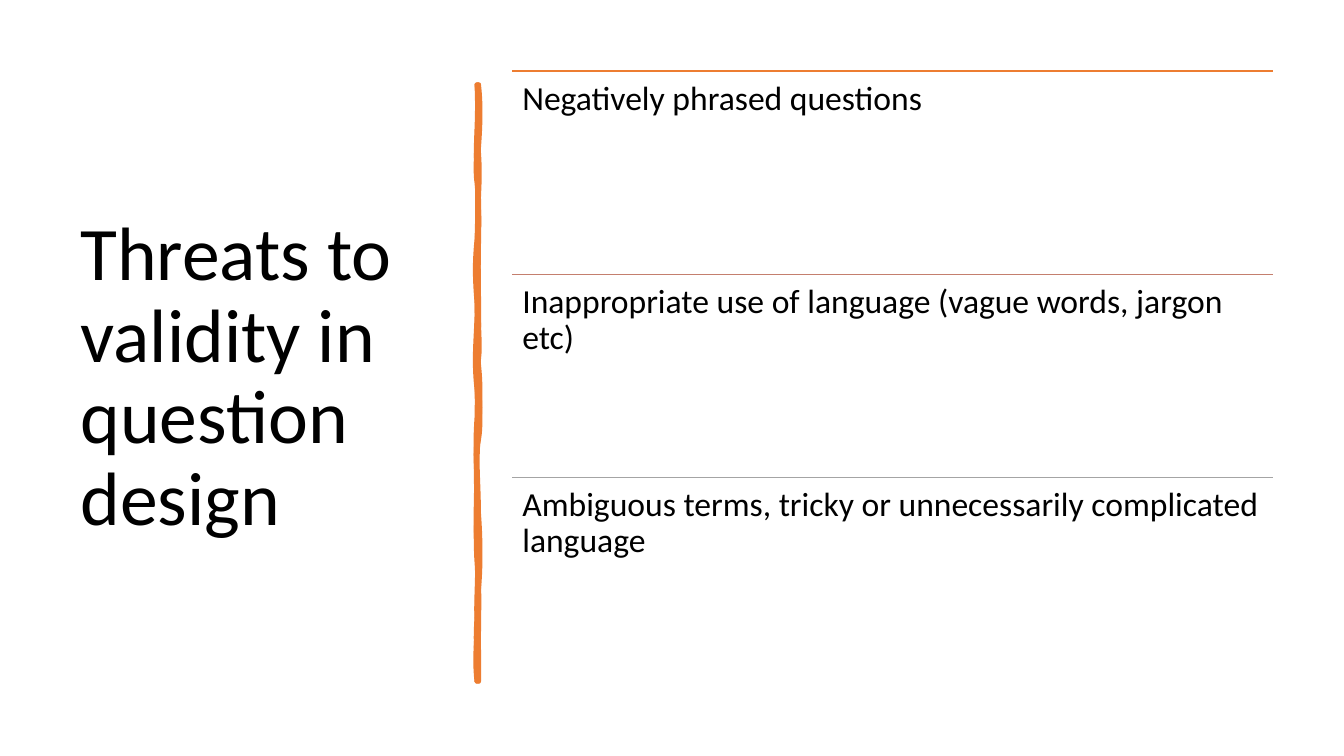
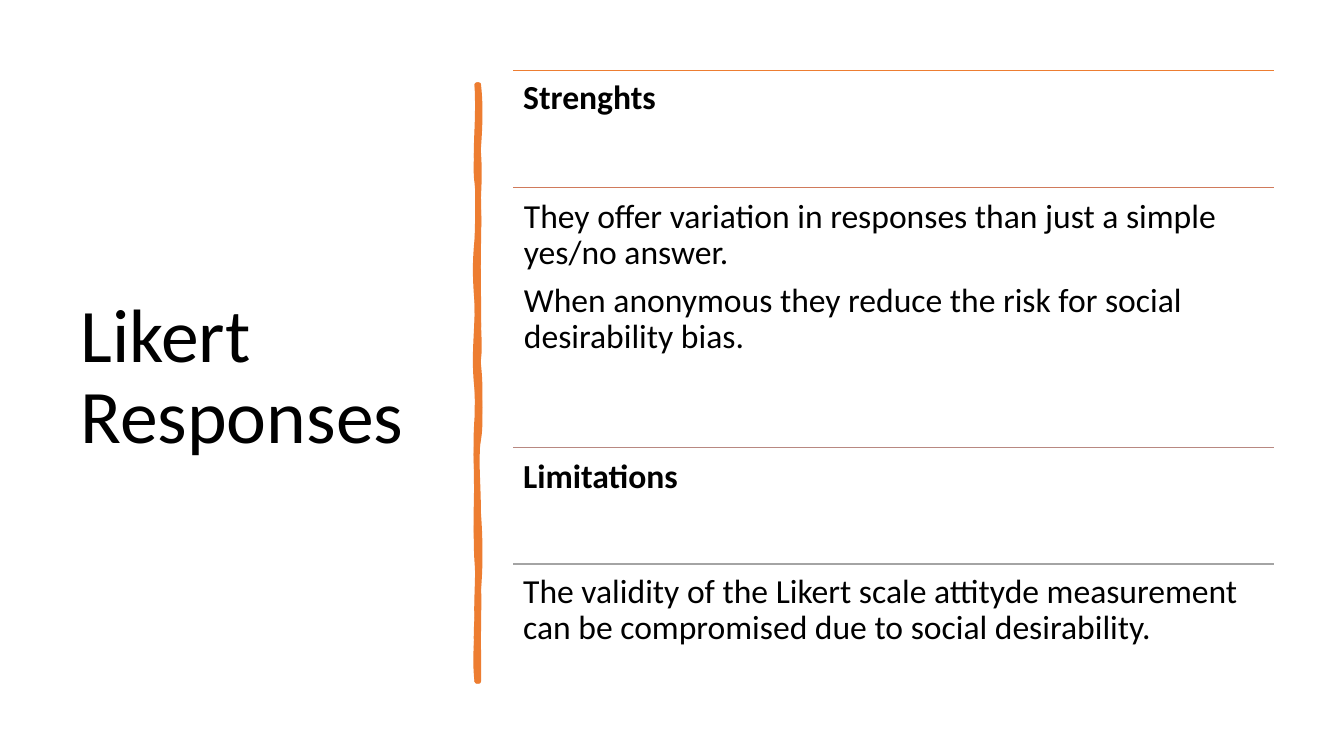
"""Build two slides, each with a title, a hand-drawn divider and ruled text rows."""
from dataclasses import dataclass

import lxml.etree
import pptx
import pptx.dml.color
import pptx.enum.shapes
import pptx.enum.text
import pptx.oxml.ns
import pptx.util

Pt = pptx.util.Pt
qn = pptx.oxml.ns.qn


@dataclass(frozen=True)
class Theme:
    font: str = "Calibri"
    title_size: float = 54
    body_size: float = 24
    text: str = "000000"
    background: str = "FFFFFF"
    orange: str = "ED7D31"
    copper: str = "D07A5B"
    clay: str = "C47F6E"
    mauve: str = "B88881"
    grey: str = "A4A4A4"
    rule_width: float = 1
    brush_width: float = 3.25
    line_spacing: float = 0.9
    paragraph_gap: float = 8.4


THEME = Theme()
ROWS_WIDTH = 543.6
BRUSH_START = (342, 60.5)
BRUSH_EDGE = [
    (343.4, 73.4, 343.4, 85.7, 342, 105.1),
    (340.6, 124.6, 342.7, 140.4, 342, 162.7),
    (341.3, 185, 342, 188.6, 342, 211.7),
    (341.3, 234, 343.4, 246.2, 342, 256.3),
    (340.6, 266.4, 344.9, 298.1, 342, 313.9),
    (339.1, 329, 339.8, 348.5, 342, 367.2),
    (343.4, 385.9, 343.4, 406.1, 342, 420.5),
    (340.6, 434.2, 342.7, 468, 342, 486.7),
    (341.3, 486.7, 340.6, 486.7, 340.6, 486.7),
    (341.3, 465.1, 339.1, 463.7, 340.6, 441.4),
    (341.3, 419.8, 341.3, 410.4, 340.6, 401),
    (339.8, 391.7, 339.8, 356.4, 340.6, 343.4),
    (340.6, 330.5, 339.1, 320.4, 340.6, 298.8),
    (341.3, 277.9, 339.8, 268.6, 340.6, 241.2),
    (341.3, 214.6, 339.8, 202.3, 340.6, 180),
    (341.3, 157, 342, 144, 340.6, 130.3),
    (338.4, 117.4, 343.4, 74.9, 340.6, 60.5),
    (341.3, 60.5, 341.3, 60.5, 342, 60.5),
]
BRUSH_BODY = [
    (342, 82.8, 339.8, 90, 342, 109.4),
    (343.4, 128.9, 341.3, 141.8, 342, 149.8),
    (342.7, 158.4, 341.3, 183.6, 342, 211.7),
    (342.7, 239.8, 340.6, 247, 342, 260.6),
    (343.4, 274.3, 343.4, 285.8, 342, 309.6),
    (339.8, 333.4, 342, 341.3, 342, 371.5),
    (342, 401, 341.3, 398.2, 342, 416.2),
    (342.7, 434.2, 341.3, 465.8, 342, 486.7),
    (341.3, 486, 340.6, 486, 340.6, 486.7),
    (338.4, 467.3, 341.3, 455, 340.6, 441.4),
    (339.8, 428.4, 342, 409.7, 340.6, 388.1),
    (339.1, 367.2, 342.7, 360, 340.6, 339.1),
    (338.4, 318.2, 343.4, 302.4, 340.6, 277.9),
    (337.7, 252.7, 341.3, 234, 340.6, 216),
    (339.1, 198, 339.1, 186.5, 340.6, 171.4),
    (341.3, 155.5, 341.3, 133.2, 340.6, 118.1),
    (339.1, 103, 342, 87.1, 340.6, 60.5),
    (341.3, 60.5, 341.3, 60.5, 342, 60.5),
]


@dataclass(frozen=True)
class Row:
    height: float
    color: str
    paragraphs: tuple
    bold: bool = False
    text_shift: float = 0
    text_drop: float = 0


def rgb(color):
    """Turn a hex string into a colour."""
    return pptx.dml.color.RGBColor.from_string(color)


def bend_segments(shape):
    """Merge each three line segments of a freeform into one cubic curve."""
    segments = list(shape.element.iter(qn("a:lnTo")))
    for first, second, third in zip(*[iter(segments)] * 3):
        curve = lxml.etree.Element(qn("a:cubicBezTo"))
        first.addprevious(curve)
        for segment in (first, second, third):
            curve.append(segment[0])
            segment.getparent().remove(segment)


class SlideWriter:
    """Hold the theme and the current slide, and draw each kind of element."""

    def __init__(self, theme):
        """Open an empty widescreen deck."""
        self.theme = theme
        self.deck = pptx.Presentation()
        self.deck.slide_width = Pt(960)
        self.deck.slide_height = Pt(540)
        self.page = None

    def start_page(self, title):
        """Add a blank page with its title and divider."""
        self.page = self.deck.slides.add_slide(self.deck.slide_layouts[6])
        self.page.background.fill.solid()
        self.page.background.fill.fore_color.rgb = rgb(self.theme.background)
        self.text(50.4, 50.4, 269, 440, (title,), self.theme.title_size,
                  inset=3.6, anchor=pptx.enum.text.MSO_ANCHOR.MIDDLE)
        self.divider()

    def text(self, left, top, width, height, paragraphs, size, bold=False,
             inset=7.2, anchor=pptx.enum.text.MSO_ANCHOR.TOP):
        """Place a wrapped text box."""
        box = self.page.shapes.add_textbox(Pt(left), Pt(top), Pt(width), Pt(height))
        frame = box.text_frame
        frame.word_wrap = True
        frame.vertical_anchor = anchor
        frame.margin_left = frame.margin_right = Pt(7.2)
        frame.margin_top = frame.margin_bottom = Pt(inset)
        frame.text = "\n".join(paragraphs)
        for index, para in enumerate(frame.paragraphs):
            para.line_spacing = self.theme.line_spacing
            if index:
                para.space_before = Pt(self.theme.paragraph_gap)
            for span in para.runs:
                span.font.name = self.theme.font
                span.font.size = Pt(size)
                span.font.bold = bold
                span.font.color.rgb = rgb(self.theme.text)

    def divider(self):
        """Draw the wavy vertical brush stroke."""
        start = [Pt(value) for value in BRUSH_START]
        builder = self.page.shapes.build_freeform(*start)
        for index, curves in enumerate((BRUSH_EDGE, BRUSH_BODY)):
            if index:
                builder.move_to(*start)
            builder.add_line_segments(
                [(Pt(curve[i]), Pt(curve[i + 1])) for curve in curves for i in (0, 2, 4)])
        stroke = builder.convert_to_shape()
        bend_segments(stroke)
        stroke.shadow.inherit = False
        stroke.fill.solid()
        stroke.fill.fore_color.rgb = rgb(self.theme.orange)
        stroke.line.color.rgb = rgb(self.theme.orange)
        stroke.line.width = Pt(self.theme.brush_width)
        outline = stroke.element.spPr.find(qn("a:ln"))
        lxml.etree.SubElement(outline, qn("a:round"))

    def rule(self, left, top, width, color):
        """Draw a thin horizontal line."""
        line = self.page.shapes.add_connector(
            pptx.enum.shapes.MSO_CONNECTOR.STRAIGHT,
            Pt(left), Pt(top), Pt(left + width), Pt(top))
        line.line.color.rgb = rgb(color)
        line.line.width = Pt(self.theme.rule_width)
        lxml.etree.SubElement(line.element.spPr, qn("a:effectLst"))

    def rows(self, left, top, rows):
        """Stack ruled text rows from the top down."""
        for row in rows:
            self.rule(left, top, ROWS_WIDTH, row.color)
            self.text(left + row.text_shift, top + row.text_drop,
                      ROWS_WIDTH - row.text_shift, row.height,
                      row.paragraphs, self.theme.body_size, row.bold)
            top += row.height


def main():
    """Write both slides and save the deck."""
    writer = SlideWriter(THEME)

    writer.start_page("Threats to validity in question design")
    threats = (
        (THEME.orange, "Negatively phrased questions"),
        (THEME.clay, "Inappropriate use of language (vague words, jargon etc)"),
        (THEME.grey, "Ambiguous terms, tricky or unnecessarily complicated language"),
    )
    writer.rows(366, 50.7, [Row(145.2, color, (threat,)) for color, threat in threats])

    writer.start_page("Likert Responses")
    writer.rows(366.6, 50.4, [
        Row(83.5, THEME.orange, ("Strenghts",), bold=True),
        Row(185.7, THEME.copper, (
            "They offer variation in responses than just a simple yes/no answer.",
            "When anonymous they reduce the risk for social desirability bias.",
        ), text_shift=0.6, text_drop=1.2),
        Row(83.4, THEME.mauve, ("Limitations",), bold=True, text_drop=1.4),
        Row(83.4, THEME.grey, (
            "The validity of the Likert scale attityde measurement "
            "can be compromised due to social desirability.",
        )),
    ])

    writer.deck.save("out.pptx")


if __name__ == "__main__":
    main()
